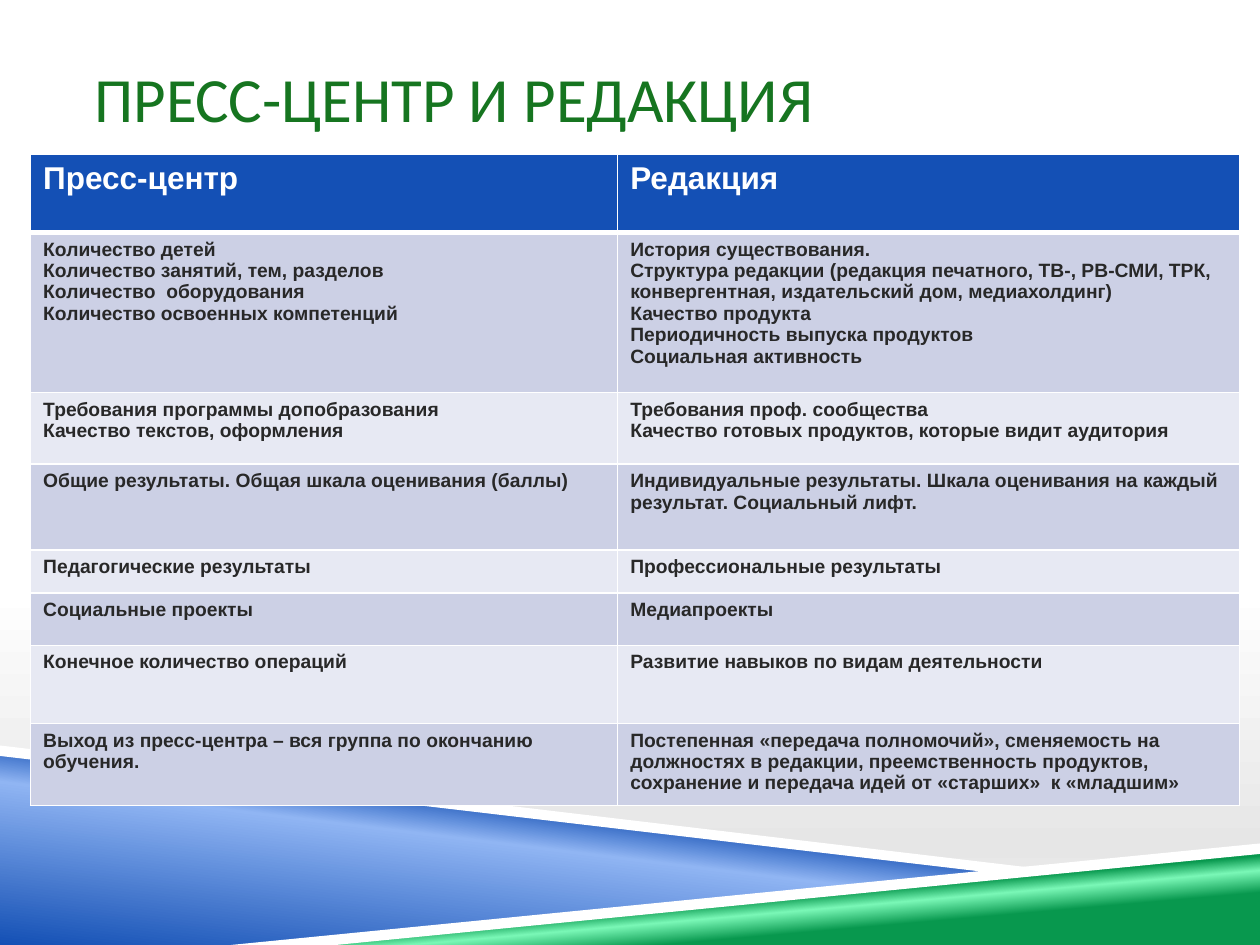
from lxml.etree import SubElement as Sub
from pptx import Presentation
from pptx.dml.color import RGBColor as RGB
from pptx.enum.text import MSO_ANCHOR as Anchor
from pptx.oxml.ns import qn
from pptx.util import Pt

COLORS = {
    "white": "FFFFFF", "haze": "E6E6E6", "title": "167520", "ink": "282828",
    "blue": "1450B5", "sky": "90B5F3", "green": "08984E", "mint": "7AF8B7",
    "band": "CCD0E5", "pale": "E7E9F3",
}

ROWS = [
    (44.6, ["Пресс-центр"], ["Редакция"]),
    (91.4,
     ["Количество детей", "Количество занятий, тем, разделов",
      "Количество  оборудования", "Количество освоенных компетенций"],
     ["История существования.",
      "Структура редакции (редакция печатного, ТВ-, РВ-СМИ, ТРК, "
      "конвергентная, издательский дом, медиахолдинг)",
      "Качество продукта", "Периодичность выпуска продуктов",
      "Социальная активность"]),
    (41.1,
     ["Требования программы допобразования", "Качество текстов, оформления"],
     ["Требования проф. сообщества",
      "Качество готовых продуктов, которые видит аудитория"]),
    (49,
     ["Общие результаты. Общая шкала оценивания (баллы)"],
     ["Индивидуальные результаты. Шкала оценивания на каждый результат. "
      "Социальный лифт."]),
    (24.5, ["Педагогические результаты"], ["Профессиональные результаты"]),
    (30, ["Социальные проекты"], ["Медиапроекты"]),
    (44.6, ["Конечное количество операций"],
     ["Развитие навыков по видам деятельности"]),
    (44.6,
     ["Выход из пресс-центра – вся группа по окончанию обучения."],
     ["Постепенная «передача полномочий», сменяемость на должностях в "
      "редакции, преемственность продуктов, сохранение и передача идей от "
      "«старших»  к «младшим»"]),
]


class Deck:
    def __init__(self, width, height):
        self.prs = Presentation()
        self.prs.slide_width, self.prs.slide_height = Pt(width), Pt(height)
        self.slide = self.prs.slides.add_slide(self.prs.slide_layouts[6])

    def gradient(self, fill, owner, stops, angle):
        fill.gradient()
        fill.gradient_angle = 360 - angle
        stop_list = owner.find(".//" + qn("a:gsLst"))
        for old in list(stop_list):
            stop_list.remove(old)
        for percent, color in stops:
            stop = Sub(stop_list, qn("a:gs"), pos=str(percent * 1000))
            Sub(stop, qn("a:srgbClr"), val=COLORS[color])

    def background(self, stops, angle):
        self.gradient(self.slide.background.fill, self.slide.element, stops, angle)

    def ribbon(self, points, color=None, stops=None, angle=0):
        builder = self.slide.shapes.build_freeform(*points[0], scale=Pt(1))
        builder.add_line_segments(points[1:], close=True)
        ribbon = builder.convert_to_shape()
        ribbon.shadow.inherit = False
        ribbon.line.fill.background()
        if stops:
            self.gradient(ribbon.fill, ribbon.element, stops, angle)
        else:
            ribbon.fill.solid()
            ribbon.fill.fore_color.rgb = RGB.from_string(COLORS[color])

    def add_lines(self, frame, lines, size, color, font, bold=False):
        for index, line in enumerate(lines):
            paragraph = frame.add_paragraph() if index else frame.paragraphs[0]
            run = paragraph.add_run()
            run.text = line
            run.font.name, run.font.size, run.font.bold = font, Pt(size), bold
            run.font.color.rgb = RGB.from_string(COLORS[color])

    def title(self, text, left, top, width, height):
        box = self.slide.shapes.add_textbox(Pt(left), Pt(top), Pt(width), Pt(height))
        frame = box.text_frame
        frame.word_wrap = True
        frame.vertical_anchor = Anchor.MIDDLE
        frame.margin_left = frame.margin_right = 0
        self.add_lines(frame, [text], 36, "title", "Calibri")

    def cell_style(self, cell, color, bottom):
        props = cell._tc.get_or_add_tcPr()
        for side, weight in (("L", 1), ("R", 1), ("T", 1), ("B", bottom)):
            line = Sub(props, qn("a:ln" + side), w=str(Pt(weight)))
            Sub(Sub(line, qn("a:solidFill")), qn("a:srgbClr"), val=COLORS["white"])
        cell.fill.solid()
        cell.fill.fore_color.rgb = RGB.from_string(COLORS[color])

    def table(self, rows, widths, left, top):
        height = sum(row[0] for row in rows)
        table = self.slide.shapes.add_table(
            len(rows), len(widths), Pt(left), Pt(top), Pt(sum(widths)), Pt(height)
        ).table
        for column, width in zip(table.columns, widths):
            column.width = Pt(width)
        for index, (height, *contents) in enumerate(rows):
            table.rows[index].height = Pt(height)
            header = index == 0
            fill = "blue" if header else ("pale", "band")[index % 2]
            size, ink = (18, "white") if header else (11, "ink")
            for column, lines in enumerate(contents):
                cell = table.cell(index, column)
                self.cell_style(cell, fill, 3 if header else 1)
                self.add_lines(cell.text_frame, lines, size, ink, "Arial", True)


def main():
    deck = Deck(720, 540)
    deck.background([(0, "white"), (62, "white"), (90, "haze"), (100, "white")], 90)
    deck.ribbon([(0, 430), (570, 498), (144, 540), (0, 540)],
                stops=[(0, "blue"), (52, "sky"), (66, "blue")], angle=277)
    deck.ribbon([(142.5, 540), (720, 484), (720, 540)],
                stops=[(28, "green"), (40, "mint"), (48, "green")], angle=265)
    deck.ribbon([(0, 426), (0, 432), (569, 499), (599, 497)], "white")
    deck.ribbon([(720, 481.5), (132.5, 540), (191.5, 540), (720, 487.5)], "white")
    deck.title("ПРЕСС-ЦЕНТР И РЕДАКЦИЯ", 54, 0, 612, 111.6)
    deck.table(ROWS, [335.5, 355.2], 17.5, 88.2)
    deck.prs.save("out.pptx")


if __name__ == "__main__":
    main()
